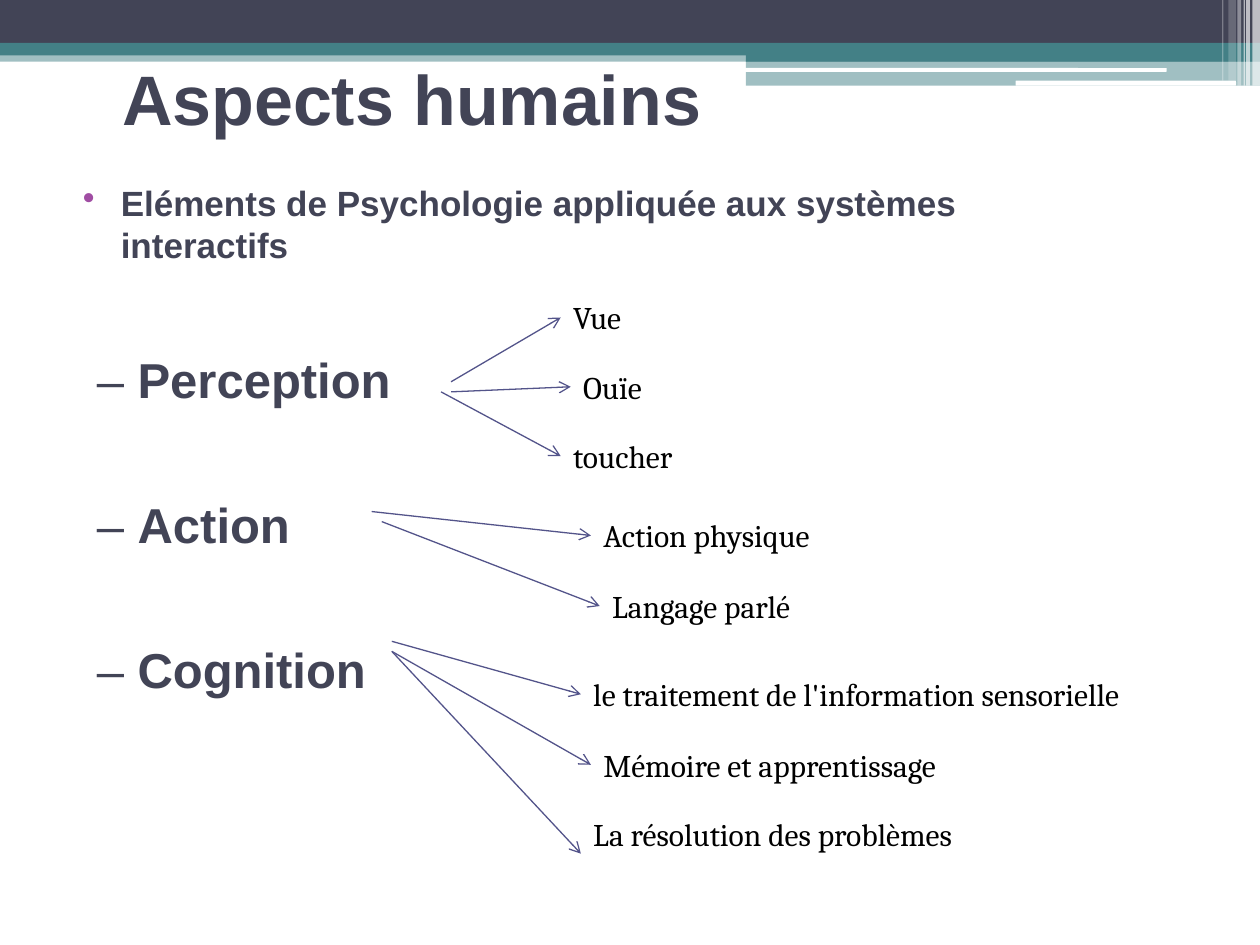
import pptx
import pptx.util
import pptx.dml.color
import pptx.enum.shapes
import pptx.enum.text
import pptx.oxml
import pptx.oxml.ns
from pptx.util import Inches

COLORS = {
    "navy": "424456",
    "teal": "438086",
    "white": "FFFFFF",
    "black": "000000",
    "violet": "A04DA3",
    "indigo": "53548A",
}

BARS = [
    (0, 0.4, 10, 0.09, "teal", 50),
    (0, 0, 10, 0.34, "navy", 100),
    (0, 0.34, 10, 0.1, "teal", 100),
    (5.92, 0.39, 4.08, 0.1, "teal", 100),
    (5.92, 0.48, 4.08, 0.2, "teal", 50),
]
PILLS = [(5.91, 0.54, 3.35, 0.03), (8.06, 0.64, 1.75, 0.04)]
STRIPES = [
    (9.94, 0.06, 0.68, 65),
    (9.89, 0.03, 0.68, 65),
    (9.87, 0.01, 0.68, 60),
    (9.82, 0.03, 0.68, 40),
    (9.75, 0.06, 0.64, 20),
    (9.7, 0.01, 0.64, 30),
]

TOPICS = {
    "Perception": [
        ("Vue", 4.45, 2.32, 1.73, 0.4, (3.58, 3.03)),
        ("Ouïe", 4.53, 2.87, 1.26, 0.4, (3.58, 3.11)),
        ("toucher", 4.45, 3.42, 1.1, 0.4, (3.5, 3.11)),
    ],
    "Action": [
        ("Action physique", 4.69, 4.05, 2.44, 0.4, (2.95, 4.06)),
        ("Langage parlé", 4.76, 4.61, 1.97, 0.4, (3.03, 4.14)),
    ],
    "Cognition": [
        ("le traitement de l'information sensorielle", 4.61, 5.31, 5.12, 0.4, (3.11, 5.09)),
        ("Mémoire et apprentissage", 4.69, 5.87, 3.99, 0.4, (3.11, 5.17)),
        ("La résolution des problèmes", 4.61, 6.42, 3.19, 0.71, (3.11, 5.17)),
    ],
}


def rgb(name):
    """Return the named colour."""
    return pptx.dml.color.RGBColor.from_string(COLORS[name])


def add_xml(parent, tag, **attributes):
    """Append a drawing element and return it."""
    child = pptx.oxml.parse_xml(f"<a:{tag} {pptx.oxml.ns.nsdecls('a')}/>")
    for key, value in attributes.items():
        child.set(key, value)
    parent.append(child)
    return child


class Painter:
    """Holds the style and the current slide."""

    heading_font = "Arial"
    label_font = "Cambria"

    def __init__(self, page):
        """Keep the slide to draw on."""
        self.page = page

    def bar(self, left, top, width, height, color, opacity=100, rounded=False):
        """Draw a filled band without outline."""
        kinds = pptx.enum.shapes.MSO_SHAPE
        kind = kinds.ROUNDED_RECTANGLE if rounded else kinds.RECTANGLE
        shape = self.page.shapes.add_shape(
            kind, Inches(left), Inches(top), Inches(width), Inches(height))
        shape.shadow.inherit = False
        shape.fill.solid()
        shape.fill.fore_color.rgb = rgb(color)
        shape.line.fill.background()
        if opacity < 100:
            fill = shape.fill._xPr.find(pptx.oxml.ns.qn("a:solidFill"))
            add_xml(fill[0], "alpha", val=str(opacity * 1000))

    def box(self, left, top, width, height):
        """Add an empty wrapping text box and return its frame."""
        box = self.page.shapes.add_textbox(
            Inches(left), Inches(top), Inches(width), Inches(height))
        box.text_frame.word_wrap = True
        return box.text_frame

    def style(self, para, size, font, color, bold=None):
        """Set the font of a paragraph."""
        para.font.size = pptx.util.Pt(size)
        para.font.name = font
        para.font.color.rgb = rgb(color)
        para.font.bold = bold

    def title(self, text):
        """Write the slide title."""
        frame = self.box(0.87, 0.36, 8.25, 0.83)
        frame.vertical_anchor = pptx.enum.text.MSO_ANCHOR.MIDDLE
        frame.text = text
        self.style(frame.paragraphs[0], 40, self.heading_font, "navy", True)

    def outline(self, heading, topics):
        """Write the bulleted heading and the dashed topics."""
        frame = self.box(0.47, 1.39, 9.92, 4.62)
        frame.margin_right = Inches(1.6)
        frame.text = heading
        para = frame.paragraphs[0]
        self.style(para, 20, self.heading_font, "navy", True)
        properties = para._p.get_or_add_pPr()
        properties.set("marL", str(Inches(0.39)))
        properties.set("indent", str(Inches(-0.3)))
        bullet = pptx.oxml.parse_xml(
            f"<a:buClr {pptx.oxml.ns.nsdecls('a')}>"
            f"<a:srgbClr val='{COLORS['violet']}'/></a:buClr>")
        properties.insert(0, bullet)
        mark = add_xml(properties, "buChar", char="•")
        bullet.addnext(mark)
        for topic in topics:
            para = frame.add_paragraph()
            self.style(para, 28, self.heading_font, "navy")
            para.line_spacing = 0.96
            para.space_before = pptx.util.Pt(50.5)
            para._p.get_or_add_pPr().set("marL", str(Inches(0.2)))
            for text, bold in (("– ", False), (topic, True)):
                span = para.add_run()
                span.text = text
                span.font.bold = bold

    def label(self, text, left, top, width, height):
        """Write a label beside its arrow."""
        frame = self.box(left, top, width, height)
        frame.text = text
        self.style(frame.paragraphs[0], 18, self.label_font, "black")

    def arrow(self, start, end):
        """Draw a thin line with an open arrowhead."""
        line = self.page.shapes.add_connector(
            pptx.enum.shapes.MSO_CONNECTOR.STRAIGHT,
            *map(Inches, start), *map(Inches, end))
        line.line.color.rgb = rgb("indigo")
        line.line.width = pptx.util.Pt(0.75)
        add_xml(line.line._get_or_add_ln(), "tailEnd", type="arrow")
        add_xml(line._element.spPr, "effectLst")


def main():
    """Build the slide and save it."""
    deck = pptx.Presentation()
    deck.slide_width, deck.slide_height = Inches(10), Inches(7.5)
    painter = Painter(deck.slides.add_slide(deck.slide_layouts[6]))
    for bar in BARS:
        painter.bar(*bar)
    for pill in PILLS:
        painter.bar(*pill, "white", rounded=True)
    for left, width, height, opacity in STRIPES:
        painter.bar(left, 0, width, height, "white", opacity)
    painter.title("Aspects humains")
    painter.outline("Eléments de Psychologie appliquée aux systèmes interactifs", TOPICS)
    for labels in TOPICS.values():
        for text, left, top, width, height, start in labels:
            painter.label(text, left, top, width, height)
            painter.arrow(start, (left, top + height / 2))
    deck.save("out.pptx")


if __name__ == "__main__":
    main()
